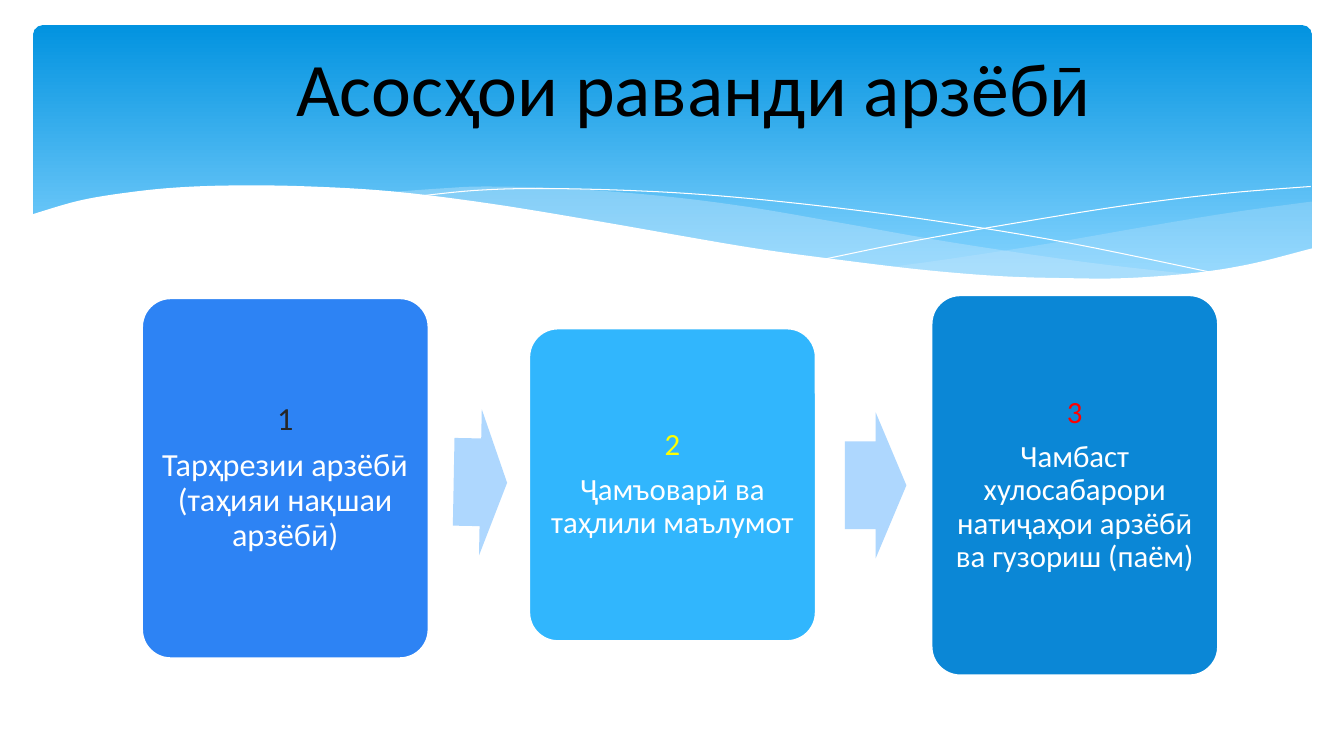
from dataclasses import dataclass
from lxml.etree import SubElement
from pptx import Presentation
from pptx.dml.color import RGBColor
from pptx.enum.shapes import MSO_SHAPE as Preset
from pptx.enum.text import MSO_ANCHOR as Anchor, PP_ALIGN as Align
from pptx.oxml.ns import qn
from pptx.util import Inches, Pt


@dataclass(frozen=True)
class Theme:
    font: str = "Calibri"
    title_size: int = 54
    title: str = "000000"
    white: str = "FFFFFF"
    banner_top: str = "0293E0"
    banner_bottom: str = "83D3FE"
    wave: str = "C6E7FC"
    arrow: str = "AED7FE"
    cards: tuple = ("2D83F4", "31B6FD", "0B87D6")
    numbers: tuple = ("262626", "FFFF00", "FF0000")
    card_sizes: tuple = (23, 22, 22)


theme = Theme()
color = RGBColor.from_string


def smooth(anchors, steps=6):
    padded = [anchors[0], *anchors, anchors[-1]]
    points = [anchors[0]]
    for a, b, c, d in zip(padded, padded[1:], padded[2:], padded[3:]):
        for step in range(1, steps + 1):
            t = step / steps
            points.append(tuple(
                (2 * q + (r - p) * t + (2 * p - 5 * q + 4 * r - s) * t**2
                 + (3 * q - p - 3 * r + s) * t**3) / 2
                for p, q, r, s in zip(a, b, c, d)))
    return points


def add_outline(points, closed):
    scaled = [(Inches(x), Inches(y)) for x, y in points]
    builder = slide.shapes.build_freeform(*scaled[0])
    builder.add_line_segments(scaled[1:], close=closed)
    outline = builder.convert_to_shape()
    outline.shadow.inherit = False
    return outline


deck = Presentation()
deck.slide_width = Inches(13.33)
deck.slide_height = Inches(7.5)
slide = deck.slides.add_slide(deck.slide_layouts[6])

banner = slide.shapes.add_shape(
    Preset.ROUNDED_RECTANGLE, Inches(0.33), Inches(0.25), Inches(12.68), Inches(2.7))
banner.adjustments[0] = 0.034
banner.shadow.inherit = False
banner.line.fill.background()
banner.fill.gradient()
banner.fill.gradient_angle = 270
stops = banner.fill.gradient_stops
for stop, tone, position in zip(stops, (theme.banner_top, theme.banner_bottom), (0, 0.9)):
    stop.color.rgb = color(tone)
    stop.position = position

right_wave = smooth([(13.01, 2), (12.27, 2.1), (11.47, 2.23), (10.38, 2.42), (9.41, 2.57), (8.82, 2.65)])
right_wave += smooth([(8.82, 2.65), (9.58, 2.72), (10.41, 2.77), (11.13, 2.77), (11.86, 2.72),
                      (12.47, 2.62), (13.01, 2.47)])
middle_wave = smooth([(11.9, 2.73), (10.76, 2.6), (9.41, 2.4), (8.39, 2.22), (7.4, 2.05), (6.52, 1.94),
                      (5.6, 1.87), (4.82, 1.85), (4.37, 1.87), (3.82, 1.91)])
middle_wave += smooth([(3.82, 1.91), (4.83, 2.03), (5.99, 2.22), (7.06, 2.4), (8.02, 2.55), (9.07, 2.68),
                       (9.98, 2.76), (10.76, 2.78), (11.31, 2.77), (11.9, 2.73)])
for points, alpha in ((right_wave, 29), (middle_wave, 40)):
    wave = add_outline(points, True)
    wave.fill.solid()
    wave.fill.fore_color.rgb = color(theme.wave)
    wave.line.fill.background()
    tint = wave.fill._xPr.find(qn("a:solidFill"))[0]
    SubElement(tint, qn("a:alpha"), val=str(alpha * 1000))

falling_line = [(4.12, 1.95), (4.7, 1.89), (5.35, 1.87), (6.25, 1.89), (7.1, 1.94), (8.11, 2.04),
                (9.27, 2.19), (10.6, 2.41), (12.1, 2.72)]
rising_line = [(8.18, 2.57), (8.96, 2.41), (9.97, 2.23), (11.15, 2.04), (12.13, 1.92), (13, 1.85)]
for anchors in (falling_line, rising_line):
    thread = add_outline(smooth(anchors), False)
    thread.fill.background()
    thread.line.color.rgb = color(theme.white)
    thread.line.width = Pt(0)

crest = smooth([(13.03, 2.46), (12.4, 2.62), (11.83, 2.71), (11.16, 2.76), (10.58, 2.76), (9.92, 2.74),
                (9.18, 2.68), (8.34, 2.58), (7.4, 2.45), (5.96, 2.2), (4.86, 2.02), (3.9, 1.9),
                (3.06, 1.85), (2.35, 1.84), (1.76, 1.86), (1.27, 1.91), (0.79, 1.99), (0.31, 2.13)])
foreground = add_outline(crest + [(0.31, 3.29), (13.03, 3.29)], True)
foreground.fill.solid()
foreground.fill.fore_color.rgb = color(theme.white)
foreground.line.fill.background()

cards = [
    (1.41, 2.96, 3.57, "Тарҳрезии арзёбӣ (таҳияи нақшаи арзёбӣ)"),
    (5.25, 3.26, 3.1, "Ҷамъоварӣ ва таҳлили маълумот"),
    (9.24, 2.93, 3.77, "Чамбаст хулосабарори натиҷаҳои арзёбӣ ва гузориш (паём)"),
]
for index, (left, top, height, caption) in enumerate(cards):
    card = slide.shapes.add_shape(
        Preset.ROUNDED_RECTANGLE, Inches(left), Inches(top), Inches(2.84), Inches(height))
    card.adjustments[0] = 0.1
    card.shadow.inherit = False
    card.fill.solid()
    card.fill.fore_color.rgb = color(theme.cards[index])
    card.line.color.rgb = color(theme.white)
    card.line.width = Pt(1.25)
    frame = card.text_frame
    frame.word_wrap = True
    frame.vertical_anchor = Anchor.MIDDLE
    frame.margin_left = frame.margin_right = Inches(0.09)
    frame.margin_top = frame.margin_bottom = Inches(0.09)
    lines = ((str(index + 1), theme.numbers[index]), (caption, theme.white))
    for para, (text, tone) in zip((frame.paragraphs[0], frame.add_paragraph()), lines):
        para.alignment = Align.CENTER
        para.line_spacing = 0.9
        para.space_after = Pt(8)
        span = para.add_run()
        span.text = text
        span.font.name = theme.font
        span.font.size = Pt(theme.card_sizes[index])
        span.font.color.rgb = color(tone)

for left, top, width, turn in ((4.5, 4.06, 0.53, 1.1), (8.38, 4.09, 0.61, 0)):
    arrow = slide.shapes.add_shape(
        Preset.RIGHT_ARROW, Inches(left), Inches(top), Inches(width), Inches(1.45))
    arrow.adjustments[0] = 0.6
    arrow.adjustments[1] = 0.5
    arrow.rotation = turn
    arrow.shadow.inherit = False
    arrow.fill.solid()
    arrow.fill.fore_color.rgb = color(theme.arrow)
    arrow.line.fill.background()

title = slide.shapes.add_textbox(Inches(0.69), Inches(0.36), Inches(10.57), Inches(1.01))
title.text_frame.word_wrap = True
title.text_frame.margin_left = Inches(2.25)
span = title.text_frame.paragraphs[0].add_run()
span.text = "Асосҳои раванди арзёбӣ"
span.font.name = theme.font
span.font.size = Pt(theme.title_size)
span.font.color.rgb = color(theme.title)

deck.save("out.pptx")
